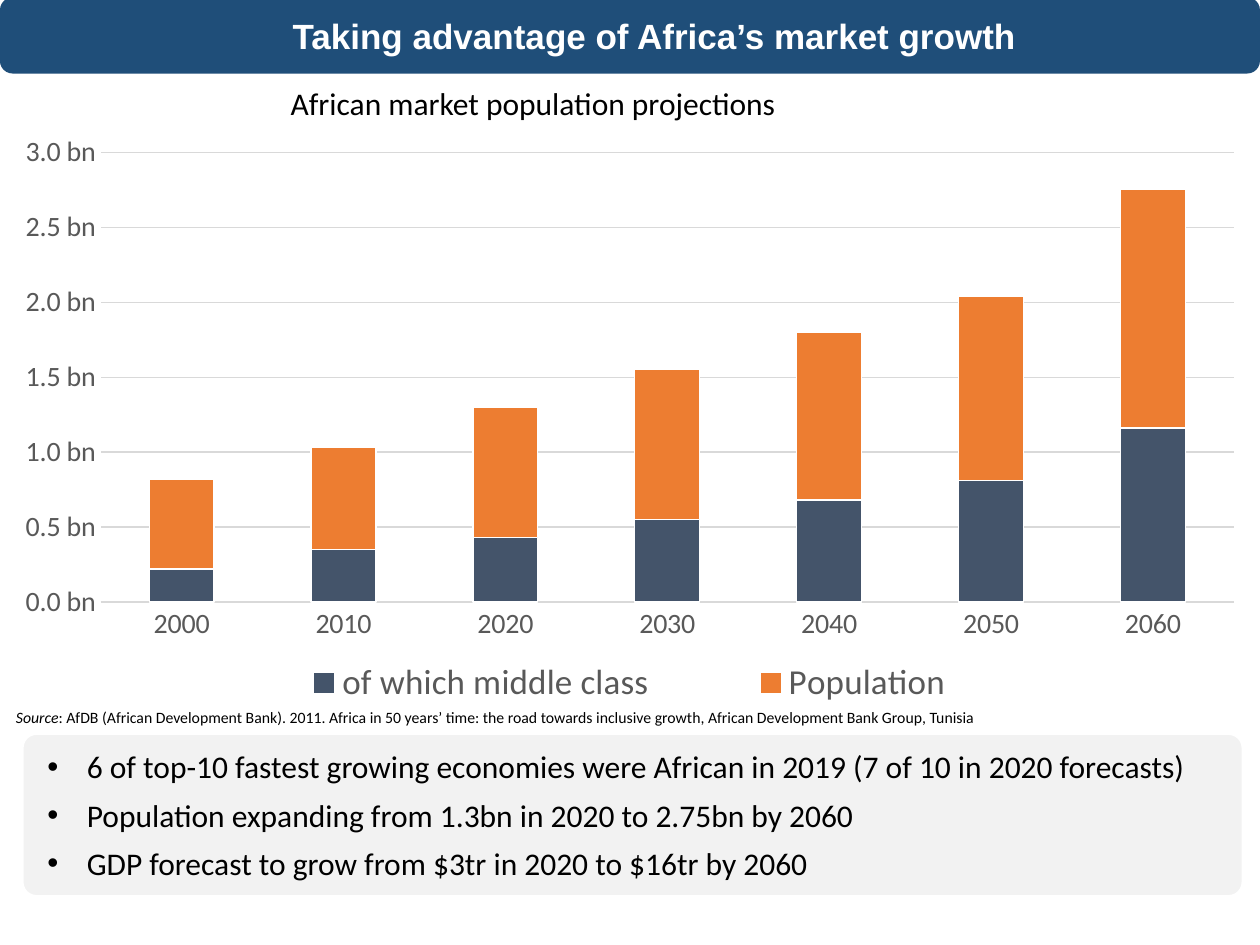
"""Build a slide on the growth of the African market."""
from lxml import etree
from pptx import Presentation
from pptx import util as u
from pptx.chart.data import CategoryChartData
from pptx.dml.color import RGBColor
from pptx.enum import chart as ch, shapes, text
from pptx.oxml import parse_xml
from pptx.oxml.ns import nsdecls, qn

TITLE = "Taking advantage of Africa’s market growth"
HEADING = "African market population projections"
SOURCE = [
    ("Source", True),
    (": AfDB (African Development Bank). 2011. Africa in 50 years’ time: the road "
     "towards inclusive growth, African Development Bank Group, Tunisia", False),
]
FACTS = [
    "6 of top-10 fastest growing economies were African in 2019 (7 of 10 in 2020 forecasts)",
    "Population expanding from 1.3bn in 2020 to 2.75bn by 2060",
    "GDP forecast to grow from $3tr in 2020 to $16tr by 2060",
]
YEARS = [str(year) for year in range(2000, 2061, 10)]
PROJECTIONS = [
    ("of which middle class", "middle", [0.22, 0.35, 0.43, 0.55, 0.68, 0.81, 1.16]),
    ("Population", "population", [0.6, 0.68, 0.87, 1, 1.12, 1.23, 1.59]),
]
THEME = {
    "colors": {"banner": "1F4E79", "panel": "F2F2F2", "white": "FFFFFF", "black": "000000",
               "label": "595959", "grid": "D9D9D9", "middle": "44546A", "population": "ED7D31"},
    "sizes": {"title": 20, "body": 18, "axis": 16, "legend": 20, "source": 9},
    "fonts": {"title": "Arial", "body": "Calibri"},
}
BOXES = {
    "banner": (0, -1.5, 720, 43.5),
    "panel": (12.5, 419, 698, 93.5),
    "facts": (20, 423.5, 680.5, 85),
    "heading": (159, 44.5, 367, 29),
    "chart": (0, 70, 719.5, 340.5),
    "source": (2, 401, 569.5, 18),
}
PLOT = (0.08, 0.05, 0.9, 0.755)
LEGEND = (0.17, 0.89, 0.66, 0.1)


def color(name):
    """Return a theme colour."""
    return RGBColor.from_string(THEME["colors"][name])


def box(name):
    """Return the place of a part as lengths."""
    return [u.Pt(value) for value in BOXES[name]]


def style(font, size, ink, face="body", bold=False, italic=False):
    """Apply theme formatting to a font."""
    font.name = THEME["fonts"][face]
    font.size = u.Pt(THEME["sizes"][size])
    font.color.rgb = color(ink)
    font.bold, font.italic = bold, italic


def rule(line, ink, width=0.75):
    """Draw a line in a theme colour."""
    line.color.rgb = color(ink)
    line.width = u.Pt(width)


def write(shape, paragraphs, size="body", ink="black", face="body", bold=False, wrap=True,
          align=text.PP_ALIGN.LEFT, indent=0, bullet=False, after=0):
    """Fill a shape with paragraphs of (words, italic) runs."""
    frame = shape.text_frame
    frame.word_wrap = wrap
    for index, runs in enumerate(paragraphs):
        paragraph = frame.add_paragraph() if index else frame.paragraphs[0]
        props = paragraph._p.get_or_add_pPr()
        props.set("marL", str(u.Pt(indent)))
        props.set("indent", str(u.Pt(-indent if bullet else 0)))
        if bullet:
            etree.SubElement(props, qn("a:buFont")).set("typeface", "Arial")
            etree.SubElement(props, qn("a:buChar")).set("char", "•")
        paragraph.alignment = align
        paragraph.space_after = u.Pt(after)
        for words, italic in runs:
            run = paragraph.add_run()
            run.text = words
            style(run.font, size, ink, face, bold, italic)


def add_panel(slide, name):
    """Add a rounded, filled rectangle."""
    panel = slide.shapes.add_shape(shapes.MSO_SHAPE.ROUNDED_RECTANGLE, *box(name))
    panel.shadow.inherit = False
    panel.fill.solid()
    panel.fill.fore_color.rgb = color(name)
    panel.line.fill.background()
    return panel


def layout(place, inner=False):
    """Return a manual chart layout in fractions of the chart."""
    target = '<c:layoutTarget val="inner"/>' if inner else ""
    modes = '<c:xMode val="edge"/><c:yMode val="edge"/>'
    sides = "".join(f'<c:{side} val="{value}"/>' for side, value in zip("xywh", place))
    return parse_xml(f'<c:layout {nsdecls("c")}><c:manualLayout>{target}{modes}{sides}'
                     '</c:manualLayout></c:layout>')


def add_projections(slide):
    """Add the stacked column chart."""
    data = CategoryChartData()
    data.categories = YEARS
    for name, _, values in PROJECTIONS:
        data.add_series(name, values)
    chart = slide.shapes.add_chart(
        ch.XL_CHART_TYPE.COLUMN_STACKED, *box("chart"), data).chart
    style(chart.font, "axis", "black")
    chart.has_title = False
    plot = chart.plots[0]
    plot.gap_width, plot.overlap, plot.vary_by_categories = 150, 100, False
    for series, (_, ink, _) in zip(plot.series, PROJECTIONS):
        series.format.fill.solid()
        series.format.fill.fore_color.rgb = color(ink)
        rule(series.format.line, "white")

    years, billions = chart.category_axis, chart.value_axis
    for axis in (years, billions):
        axis.major_tick_mark = axis.minor_tick_mark = ch.XL_TICK_MARK.NONE
        style(axis.tick_labels.font, "axis", "label")
    rule(years.format.line, "grid")
    billions.format.line.fill.background()
    rule(billions.major_gridlines.format.line, "grid")
    billions.minimum_scale, billions.maximum_scale, billions.major_unit = 0, 3, 0.5
    billions.tick_labels.number_format = '0.0\\ "bn"'
    billions.tick_labels.number_format_is_linked = False

    chart.has_legend = True
    legend = chart.legend
    legend.position = ch.XL_LEGEND_POSITION.BOTTOM
    legend.include_in_layout = False
    style(legend.font, "legend", "label")
    area = chart._chartSpace.chart.plotArea
    for parent, place in ((area, PLOT), (legend._element, LEGEND)):
        for old in parent.findall(qn("c:layout")):
            parent.remove(old)
        spot = 0 if parent is area else 1
        parent.insert(spot, layout(place, inner=parent is area))


def main():
    """Assemble and save the slide."""
    deck = Presentation()
    deck.slide_width, deck.slide_height = u.Pt(720), u.Pt(540)
    slide = deck.slides.add_slide(deck.slide_layouts[6])
    banner = add_panel(slide, "banner")
    banner.text_frame.vertical_anchor = text.MSO_ANCHOR.MIDDLE
    write(banner, [[(TITLE, False)]], size="title", ink="white", face="title", bold=True,
          align=text.PP_ALIGN.CENTER, indent=28)
    panel = add_panel(slide, "panel")
    panel.adjustments[0] = 0.09
    rule(panel.line, "white", 2)
    write(slide.shapes.add_textbox(*box("facts")), [[(fact, False)] for fact in FACTS],
          indent=22.5, bullet=True, after=6)
    write(slide.shapes.add_textbox(*box("heading")), [[(HEADING, False)]])
    add_projections(slide)
    write(slide.shapes.add_textbox(*box("source")), [SOURCE], size="source", wrap=False)
    deck.save("out.pptx")


if __name__ == "__main__":
    main()
